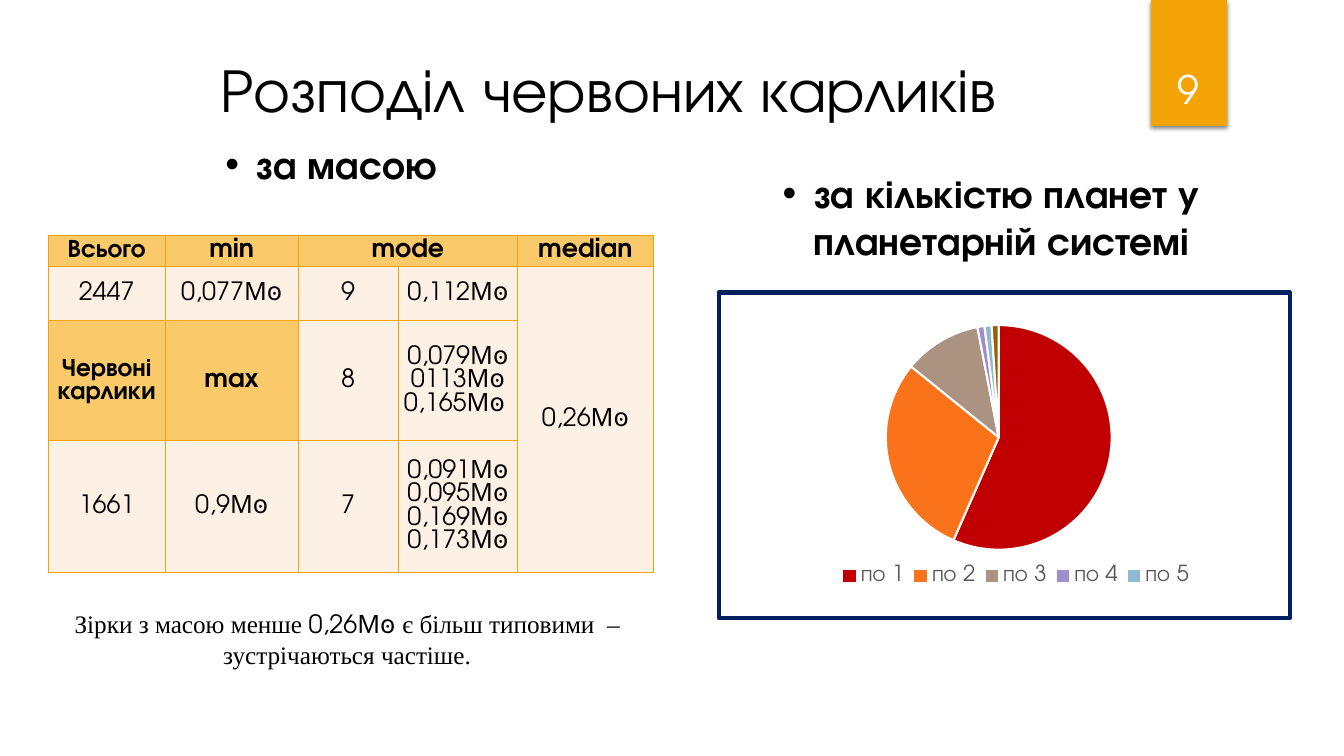
from lxml import etree
from pptx import Presentation
from pptx.chart.data import CategoryChartData
from pptx.dml.color import RGBColor
from pptx.enum.chart import XL_CHART_TYPE, XL_LEGEND_POSITION
from pptx.enum.shapes import MSO_SHAPE
from pptx.enum.text import MSO_ANCHOR, PP_ALIGN
from pptx.oxml import parse_xml
from pptx.oxml.ns import nsdecls, qn
from pptx.util import Pt

PIE = XL_CHART_TYPE.PIE
LEGEND_BOTTOM = XL_LEGEND_POSITION.BOTTOM
RECTANGLE = MSO_SHAPE.RECTANGLE
MIDDLE, BOTTOM, TOP = MSO_ANCHOR.MIDDLE, MSO_ANCHOR.BOTTOM, MSO_ANCHOR.TOP
CENTER = PP_ALIGN.CENTER

SANS, SERIF = "TeX Gyre Adventor", "Times New Roman"
AMBER, LIGHT_AMBER, CREAM = "F5A408", "FAC96A", "FDF1E6"
BLACK, WHITE, GRAY, NAVY = "000000", "FFFFFF", "595959", "002060"

MASS_COLUMNS = [83.5, 95, 71.5, 85.2, 97]
MASS_ROWS = [19.4, 39, 85.7, 94.3]
MASS_CELLS = [
    ["Всього", "min", "mode", None, "median"],
    ["2447", "0,077Мꙩ", "9", "0,112Мꙩ", "0,26Мꙩ"],
    ["Червоні карлики", "max", "8", "0,079Мꙩ 0113Мꙩ 0,165Мꙩ ", None],
    ["1661", "0,9Мꙩ", "7", "0,091Мꙩ\n0,095Мꙩ\n0,169Мꙩ\n0,173Мꙩ", None],
]
HEADING_CELLS = {(0, 0), (0, 1), (0, 2), (0, 4), (2, 0), (2, 1)}
PLANETS = {"по 1": (56, "C00000"), "по 2": (29, "FA731A"), "по 3": (11, "AB9281"),
           "по 4": (1, "A18CD0"), "по 5": (1, "8EBBD2"), "по 6": (None, "ACC995"),
           "по 7": (1, "936205")}
UNLISTED = (5, 6)


def color(value):
    return RGBColor.from_string(value)


def points(*lengths):
    return [Pt(length) for length in lengths]


def style_font(font, size, value, name=SANS, bold=False):
    font.size, font.name, font.bold = Pt(size), name, bold
    font.color.rgb = color(value)


def add_run(paragraph, text, size, value=BLACK, name=SANS, bold=False):
    run = paragraph.add_run()
    run.text = text
    style_font(run.font, size, value, name, bold)


def add_text(slide, box, runs, size, value=BLACK, bold=False, bullet=False, anchor=TOP):
    frame = slide.shapes.add_textbox(*points(*box)).text_frame
    frame.word_wrap = True
    frame.vertical_anchor = anchor
    paragraph = frame.paragraphs[0]
    paragraph.alignment = CENTER
    if bullet:
        properties = paragraph._p.get_or_add_pPr()
        properties.set("marL", str(Pt(22.5)))
        properties.set("indent", str(Pt(-22.5)))
        properties.append(parse_xml(f'<a:buFont {nsdecls("a")} typeface="Arial"/>'))
        properties.append(parse_xml(f'<a:buChar {nsdecls("a")} char="•"/>'))
    for text, name in runs:
        add_run(paragraph, text, size, value, name, bold)


def add_page_badge(slide, box):
    left, top, width, height = box
    badge = slide.shapes.add_shape(RECTANGLE, *points(*box))
    badge.shadow.inherit = False
    badge.fill.solid()
    badge.fill.fore_color.rgb = color(AMBER)
    badge.line.fill.background()
    effects = badge._element.spPr.find(qn("a:effectLst"))
    effects.append(parse_xml(
        f'<a:outerShdw {nsdecls("a")} blurRad="{Pt(3)}" dist="{Pt(2)}" dir="5400000">'
        f'<a:srgbClr val="{BLACK}"><a:alpha val="45000"/></a:srgbClr></a:outerShdw>'))
    add_text(slide, (left - 7, top + 23, width + 12, height - 29.5), [("9", SANS)],
             28, WHITE, anchor=BOTTOM)


def add_cell_borders(cell):
    properties = cell._tc.get_or_add_tcPr()
    for index, side in enumerate(("lnL", "lnR", "lnT", "lnB")):
        properties.insert(index, parse_xml(
            f'<a:{side} {nsdecls("a")} w="{Pt(0.75)}"><a:solidFill>'
            f'<a:srgbClr val="{AMBER}"/></a:solidFill></a:{side}>'))


def add_mass_table(slide, left, top):
    table = slide.shapes.add_table(
        len(MASS_ROWS), len(MASS_COLUMNS),
        *points(left, top, sum(MASS_COLUMNS), sum(MASS_ROWS))).table
    table.first_row = table.horz_banding = False
    for column, width in zip(table.columns, MASS_COLUMNS):
        column.width = Pt(width)
    for row, height in zip(table.rows, MASS_ROWS):
        row.height = Pt(height)
    table.cell(0, 2).merge(table.cell(0, 3))
    table.cell(1, 4).merge(table.cell(3, 4))
    for row, texts in enumerate(MASS_CELLS):
        for column, text in enumerate(texts):
            cell = table.cell(row, column)
            heading = (row, column) in HEADING_CELLS
            cell.margin_left = cell.margin_right = cell.margin_top = cell.margin_bottom = 0
            cell.vertical_anchor = MIDDLE
            cell.fill.solid()
            cell.fill.fore_color.rgb = color(LIGHT_AMBER if heading else CREAM)
            add_cell_borders(cell)
            if text is None:
                continue
            for index, line in enumerate(text.split("\n")):
                frame = cell.text_frame
                paragraph = frame.add_paragraph() if index else frame.paragraphs[0]
                paragraph.alignment = CENTER
                add_run(paragraph, line, 18, bold=heading)


def manual_layout(x, y, width, height, inner=False):
    target = '<c:layoutTarget val="inner"/>' if inner else ""
    return parse_xml(
        f'<c:layout {nsdecls("c")}><c:manualLayout>{target}'
        f'<c:xMode val="edge"/><c:yMode val="edge"/><c:x val="{x}"/><c:y val="{y}"/>'
        f'<c:w val="{width}"/><c:h val="{height}"/></c:manualLayout></c:layout>')


def set_layout(element, layout, position):
    for existing in element.findall(qn("c:layout")):
        element.remove(existing)
    element.insert(position, layout)


def add_planet_chart(slide, box):
    data = CategoryChartData()
    data.categories = list(PLANETS)
    data.add_series("Series 1", [value for value, _ in PLANETS.values()])
    chart = slide.shapes.add_chart(PIE, *points(*box), data).chart
    chart.has_title = False
    style_font(chart.font, 10, BLACK)
    chart.plots[0].vary_by_categories = True
    for index, (_, fill) in enumerate(PLANETS.values()):
        wedge = chart.plots[0].series[0].points[index].format
        wedge.fill.solid()
        wedge.fill.fore_color.rgb = color(fill)
        wedge.line.color.rgb = color(WHITE)
        wedge.line.width = Pt(1.5)
    chart.has_legend = True
    legend = chart.legend
    legend.position = LEGEND_BOTTOM
    legend.include_in_layout = False
    style_font(legend.font, 16, GRAY)
    for offset, index in enumerate(UNLISTED, 1):
        legend._element.insert(offset, parse_xml(
            f'<c:legendEntry {nsdecls("c")}><c:idx val="{index}"/>'
            f'<c:delete val="1"/></c:legendEntry>'))
    set_layout(legend._element, manual_layout(0.2, 0.82, 0.64, 0.1), 1 + len(UNLISTED))
    space = chart._chartSpace
    set_layout(space.chart.plotArea, manual_layout(0.06, 0.1, 0.86, 0.69, True), 0)
    frame = etree.fromstring(
        f'<c:spPr {nsdecls("c", "a")}><a:solidFill><a:srgbClr val="{WHITE}"/></a:solidFill>'
        f'<a:ln w="{Pt(3)}"><a:solidFill><a:srgbClr val="{NAVY}"/></a:solidFill></a:ln></c:spPr>')
    space.chart.addnext(frame)


def build_slide(presentation):
    slide = presentation.slides.add_slide(presentation.slide_layouts[6])
    add_page_badge(slide, (822.3, 0, 54.3, 90))
    add_planet_chart(slide, (512, 207.5, 411, 235.5))
    add_text(slide, (478, 117.5, 460, 75),
             [("за кількістю планет у планетарній системі ", SANS)], 28, bold=True, bullet=True)
    add_mass_table(slide, 34.5, 168.5)
    add_text(slide, (-41, 32.5, 964, 60.5), [("Розподіл червоних карликів ", SANS)], 44)
    add_text(slide, (6.5, 96.5, 460, 41), [("за масою", SANS)], 28, bold=True, bullet=True)
    add_text(slide, (18, 431.3, 460, 51),
             [("Зірки з масою менше ", SERIF), ("0,26Мꙩ ", SANS),
              ("є більш типовими  – зустрічаються частіше.", SERIF)], 18)


def main():
    presentation = Presentation()
    presentation.slide_width, presentation.slide_height = points(960, 540)
    build_slide(presentation)
    presentation.save("out.pptx")


if __name__ == "__main__":
    main()
